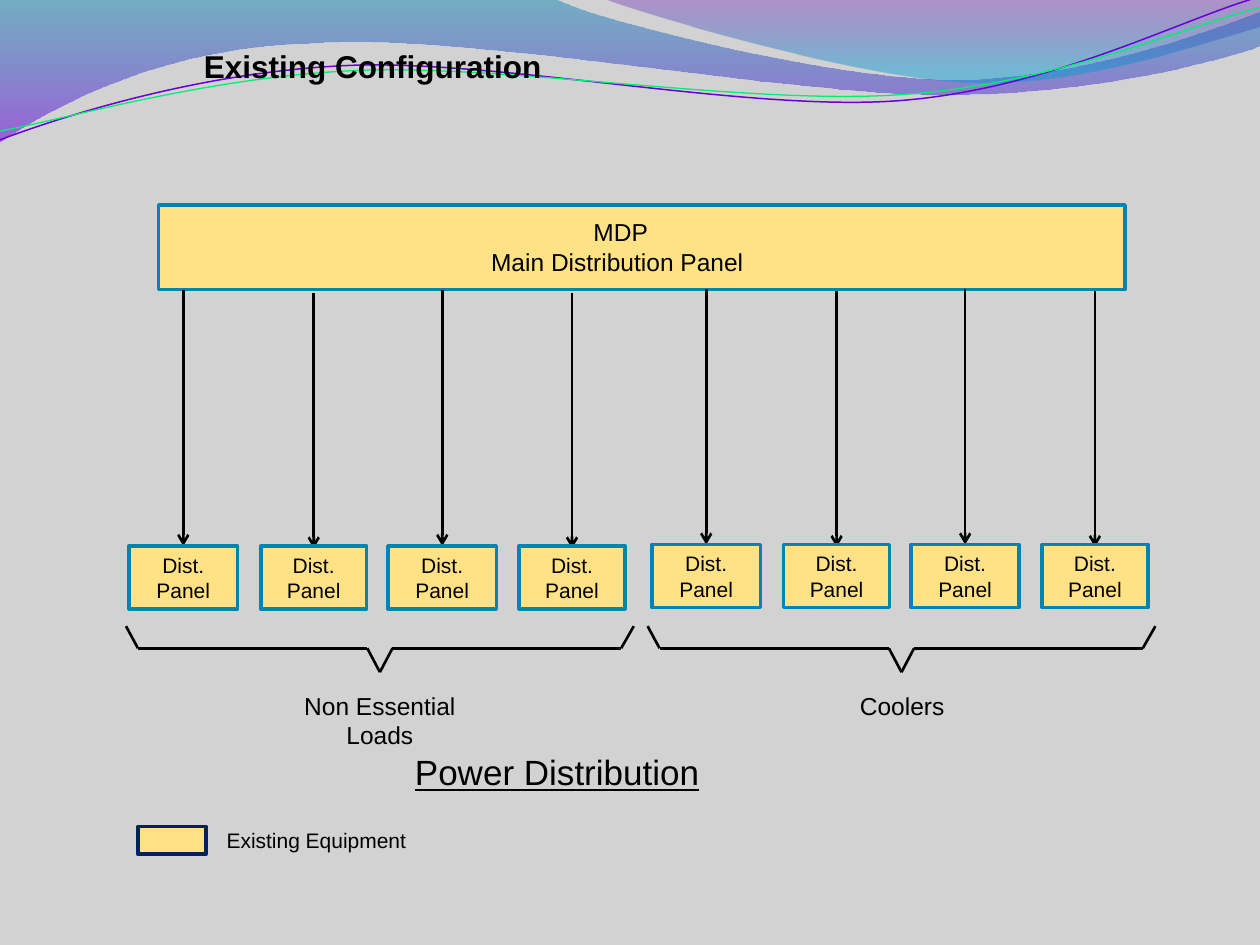
from lxml import etree
from pptx import Presentation
from pptx.dml.color import RGBColor
from pptx.enum.shapes import MSO_CONNECTOR, MSO_SHAPE
from pptx.enum.text import MSO_ANCHOR, PP_ALIGN
from pptx.oxml.ns import qn
from pptx.util import Inches, Pt

STRAIGHT, RECTANGLE = MSO_CONNECTOR.STRAIGHT, MSO_SHAPE.RECTANGLE
TOP, MIDDLE = MSO_ANCHOR.TOP, MSO_ANCHOR.MIDDLE
LEFT, CENTER = PP_ALIGN.LEFT, PP_ALIGN.CENTER

COLORS = {
    "background": "D2D2D2", "ink": "000000", "equipment": "FFE285",
    "edge": "0084B4", "legend edge": "002060", "glow": "E0E0E0",
    "blue": "0082B2", "purple": "6E00DC", "violet": "5A00B3", "sky": "009BD4",
    "purple thread": "6B00D6", "green thread": "01EF72",
}
# The slide is a grid of 100 columns by 75 rows; every length is in cells.
COLUMNS, ROWS = 100, 75


def color(name):
    return RGBColor.from_string(COLORS[name])


def bend(shape, pieces):
    """Join the three line segments of each curved piece into one Bezier curve."""
    segments = iter(list(shape.element.spPr.iter(qn("a:lnTo"))))
    for piece in pieces:
        group = [next(segments) for _ in range(len(piece) // 2)]
        if len(group) == 3:
            curve = etree.Element(qn("a:cubicBezTo"))
            group[0].addprevious(curve)
            for segment in group:
                curve.append(segment[0])
                segment.getparent().remove(segment)


def write_text(shape, text, size=12, align=LEFT, anchor=TOP, bold=False, underline=False):
    frame = shape.text_frame
    frame.word_wrap = True
    frame.vertical_anchor = anchor
    for number, line in enumerate(text.split("\n")):
        para = frame.add_paragraph() if number else frame.paragraphs[0]
        para.alignment = align
        span = para.add_run()
        span.text = line
        span.font.name, span.font.size = "Arial", Pt(size)
        span.font.bold, span.font.underline = bold, underline
        span.font.color.rgb = color("ink")


class DiagramSlide:
    def __init__(self, deck):
        self.page = deck.slides.add_slide(deck.slide_layouts[6])
        self.shapes = self.page.shapes
        self.cell_width = deck.slide_width / COLUMNS
        self.cell_height = deck.slide_height / ROWS
        fill = self.page.background.fill
        fill.solid()
        fill.fore_color.rgb = color("background")

    def place(self, x, y):
        return round(x * self.cell_width), round(y * self.cell_height)

    def outline(self, shape, name, width):
        shape.line.color.rgb = color(name)
        shape.line.width = Pt(width)

    def freeform(self, start, pieces, closed):
        """A piece is an end point, or two handles and an end point."""
        points = [self.place(*piece[i:i + 2]) for piece in pieces
                  for i in range(0, len(piece), 2)]
        builder = self.shapes.build_freeform(*self.place(*start), scale=1.0)
        builder.add_line_segments(points, close=closed)
        shape = builder.convert_to_shape()
        bend(shape, pieces)
        shape.shadow.inherit = False
        return shape

    def wave(self, start, pieces, stops):
        shape = self.freeform(start, pieces, True)
        shape.line.fill.background()
        shape.fill.gradient()
        shape.fill.gradient_angle = 270
        for stop, (position, name, _) in zip(shape.fill.gradient_stops, stops):
            stop.position = position
            stop.color.rgb = color(name)
        tints = shape.element.spPr.iter(qn("a:srgbClr"))
        for tint, (_, _, opacity) in zip(list(tints), stops):
            etree.SubElement(tint, qn("a:alpha"), val=str(opacity * 1000))

    def thread(self, start, pieces, name, width):
        shape = self.freeform(start, pieces, False)
        shape.fill.background()
        self.outline(shape, name, width)

    def box(self, x, y, width, height, edge="edge", text="", **style):
        shape = self.shapes.add_shape(RECTANGLE, *self.place(x, y), *self.place(width, height))
        shape.shadow.inherit = False
        shape.fill.solid()
        shape.fill.fore_color.rgb = color("equipment")
        if edge:
            self.outline(shape, edge, 2)
        else:
            shape.line.fill.background()
        if text:
            write_text(shape, text, **style)

    def label(self, x, y, width, height, text, **style):
        shape = self.shapes.add_textbox(*self.place(x, y), *self.place(width, height))
        write_text(shape, text, **style)

    def connector(self, start, end, arrow=False, shadow=False):
        line = self.shapes.add_connector(STRAIGHT, *self.place(*start), *self.place(*end))
        self.outline(line, "ink", 1.5)
        properties = line.element.spPr
        if arrow:
            etree.SubElement(properties.find(qn("a:ln")), qn("a:tailEnd"), type="arrow")
        effects = etree.SubElement(properties, qn("a:effectLst"))
        if shadow:
            outer = etree.SubElement(effects, qn("a:outerShdw"), blurRad=str(Pt(4.5)),
                                     dist=str(Pt(3)), dir="5400000", rotWithShape="0")
            tint = etree.SubElement(outer, qn("a:srgbClr"), val=COLORS["glow"])
            etree.SubElement(tint, qn("a:alpha"), val="48000")

    def panel_group(self, left, top):
        """Four distribution panels, each fed by an arrow."""
        for number, offset in enumerate((0, 10.45, 20.55, 30.95)):
            narrow = number % 2
            width = 8.4 if narrow else 8.6
            x = left + offset
            middle, tip = x + width / 2, top + 0.2 * narrow
            self.connector((middle, tip - 20.3), (middle, tip), arrow=True)
            self.box(x, top, width, 5, text="Dist.\nPanel", align=CENTER, anchor=MIDDLE)

    def brace(self, left):
        corners = ((0, 49.7), (0.95, 51.45), (19.15, 51.45), (20.15, 53.35),
                   (21.15, 51.45), (39.3, 51.45), (40.3, 49.7))
        points = [(left + x, y) for x, y in corners]
        for start, end in zip(points, points[1:]):
            self.connector(start, end, shadow=True)


def main():
    deck = Presentation()
    deck.slide_width, deck.slide_height = Inches(10), Inches(7.5)
    slide = DiagramSlide(deck)

    # Decorative waves and threads across the top
    slide.wave((0, 0), [
        (44, -0.1), (47.6, 1.7, 66.4, 6.3, 75.8, 6.3), (85.3, 6.3, 95.8, 2.6, 100, 0.9),
        (100.1, 3.6), (98.3, 4.4, 87, 7.6, 74.6, 7.5), (62.2, 7.5, 38.2, 2.8, 25.7, 3.4),
        (12.9, 3.6, 4.6, 8.3, -0.1, 11.3)], [(0, "blue", 45), (1, "purple", 55)])
    slide.wave((47.9, -0.1), [
        (50.9, 1.1, 68.2, 6.2, 76.9, 6.5), (85.6, 6.9, 96.1, 3.2, 100, 2.1), (100, 0)],
        [(0, "violet", 30), (0.8, "sky", 45)])
    slide.thread((0, 11.1), [
        (4.8, 9.3, 15.8, 5.7, 27.7, 5.2), (39.5, 4.7, 59.3, 8.9, 71.3, 8),
        (83.3, 7.1, 93.8, 1.5, 99.8, -0.2)], "purple thread", 0.85)
    slide.thread((0, 10.4), [
        (4.7, 9.6, 16.4, 6.1, 28.3, 5.6), (40.3, 5.1, 59.7, 8.4, 71.7, 7.5),
        (83.6, 6.7, 94.1, 2.1, 100, 0.6)], "green thread", 0.75)

    # Main panel
    slide.box(12.6, 16.27, 76.7, 6.7)
    slide.box(36.42, 16.75, 25.7, 5.7, edge=None, text="MDP\nMain Distribution Panel ",
              size=14, align=CENTER)

    # Legend and title
    slide.box(10.95, 65.6, 5.4, 2.2, edge="legend edge")
    slide.label(17, 65.2, 17, 3, "Existing Equipment")
    slide.label(15.2, 3.25, 70.9, 4, "Existing Configuration", size=18, bold=True)

    # Panels, braces and the loads they feed
    for panel_left, panel_top, brace_left, load_left, load_height, load in (
            (10.25, 43.33, 10, 21.2, 5.7, "Non Essential Loads"),
            (51.75, 43.22, 51.4, 62.65, 3.4, "Coolers")):
        slide.panel_group(panel_left, panel_top)
        slide.brace(brace_left)
        slide.label(load_left, 54.35, 17.9, load_height, load, size=14, align=CENTER)

    # Caption
    slide.label(31.95, 59.1, 40, 4.4, "Power Distribution", size=20, underline=True)
    deck.save("out.pptx")


if __name__ == "__main__":
    main()
